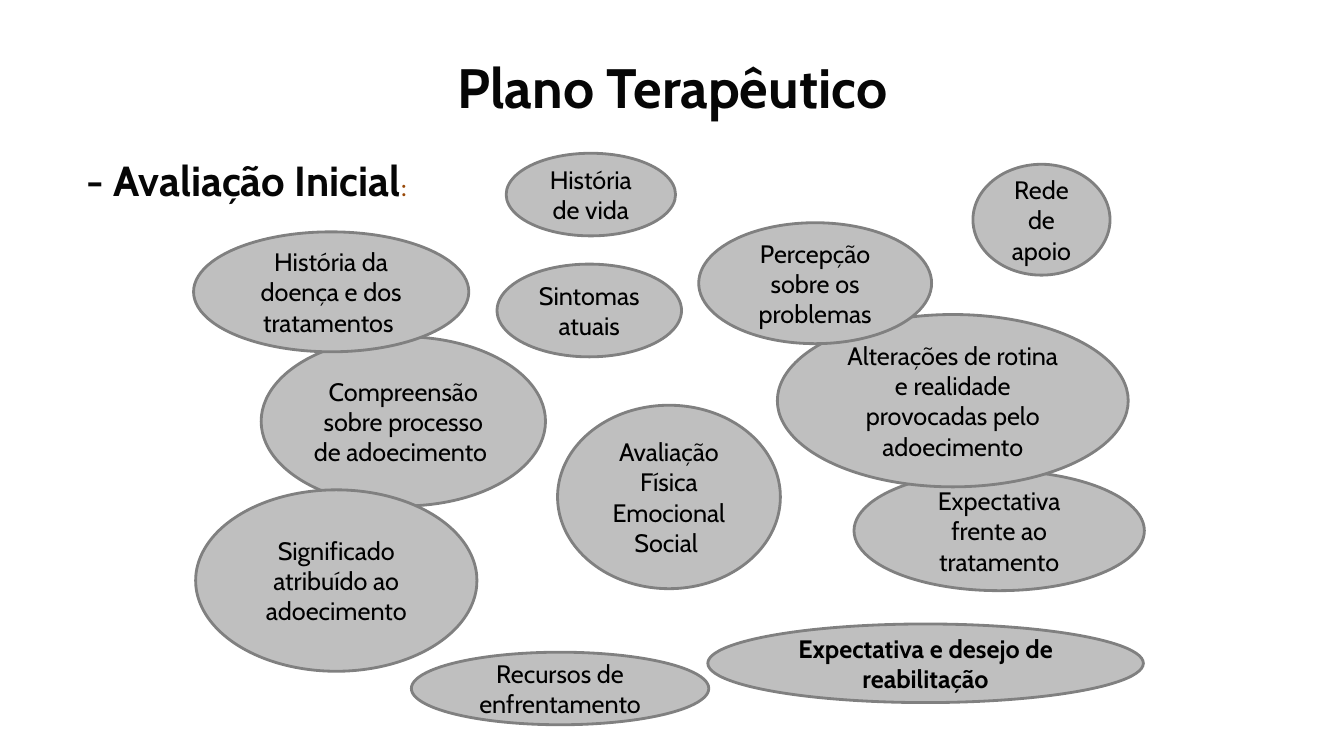
from pptx import Presentation
from pptx.dml.color import RGBColor
from pptx.enum.shapes import MSO_SHAPE
from pptx.enum.text import MSO_ANCHOR, PP_ALIGN
from pptx.util import Emu, Pt

EMU_PER_PX = 9144
TITLE_ONLY = 5
ELLIPSE = MSO_SHAPE.OVAL
MIDDLE, TOP = MSO_ANCHOR.MIDDLE, MSO_ANCHOR.TOP
CENTER, JUSTIFY = PP_ALIGN.CENTER, PP_ALIGN.JUSTIFY

COLORS = {
    "heading": "060606",
    "text": "000000",
    "colon": "984807",
    "bubble": "BFBFBF",
    "outline": "808080",
}

# left, top, width, height, topic; from back to front
TOPICS = [
    (502, 152, 168, 82, "História de vida"),
    (259, 334, 282, 168, "Compreensão sobre processo de adoecimento "),
    (194, 486, 279, 180, "Significado atribuído ao adoecimento"),
    (847, 467, 288, 119, "Expectativa frente ao tratamento"),
    (702, 619, 432, 78, "Expectativa e desejo de reabilitação"),
    (408, 647, 295, 72, "Recursos de enfrentamento"),
    (965, 163, 136, 110, "Rede de apoio"),
    (771, 312, 348, 171, "Alterações de rotina e realidade provocadas pelo adoecimento"),
    (493, 262, 183, 92, "Sintomas atuais"),
    (693, 221, 231, 120, "Percepção sobre os problemas"),
    (192, 230, 273, 119, "História da doença e dos tratamentos "),
    (553, 402, 221, 182, "Avaliação\nFísica\nEmocional\nSocial "),
]
HIGHLIGHTED = "Expectativa e desejo de reabilitação"


def px(length):
    return Emu(length * EMU_PER_PX)


def color(name):
    return RGBColor.from_string(COLORS[name])


def add_run(paragraph, text, *, size=18, font="Cabin", ink="text", bold=False):
    run = paragraph.add_run()
    run.text = text
    run.font.size = Pt(size)
    run.font.name = font
    run.font.bold = bold
    run.font.color.rgb = color(ink)


class TherapySlide:
    """Holds the slide and draws its kinds of element in one style."""

    def __init__(self, presentation):
        self.slide = presentation.slides.add_slide(presentation.slide_layouts[TITLE_ONLY])

    def set_text(self, frame, lines, *, anchor=MIDDLE, align=CENTER, **run_format):
        """Fill a text frame with one paragraph per line; return the last one."""
        frame.word_wrap = True
        frame.vertical_anchor = anchor
        for index, line in enumerate(lines.split("\n")):
            paragraph = frame.add_paragraph() if index else frame.paragraphs[0]
            paragraph.alignment = align
            add_run(paragraph, line, **run_format)
        return paragraph

    def title(self, left, top, width, height, text):
        heading = self.slide.shapes.title
        heading.left, heading.top = px(left), px(top)
        heading.width, heading.height = px(width), px(height)
        self.set_text(heading.text_frame, text, size=39.6, ink="heading", bold=True)

    def subtitle(self, left, top, width, height, text):
        box = self.slide.shapes.add_textbox(px(left), px(top), px(width), px(height))
        frame = box.text_frame
        frame.margin_left = frame.margin_right = px(7)
        frame.margin_top = frame.margin_bottom = px(4)
        paragraph = self.set_text(frame, text, anchor=TOP, align=JUSTIFY,
                                  size=30, ink="heading", bold=True)
        paragraph.space_before = paragraph.space_after = Pt(6)
        add_run(paragraph, ":", font="Calibri", ink="colon")

    def bubble(self, left, top, width, height, topic):
        bubble = self.slide.shapes.add_shape(ELLIPSE, px(left), px(top), px(width), px(height))
        bubble.shadow.inherit = False
        bubble.fill.solid()
        bubble.fill.fore_color.rgb = color("bubble")
        bubble.line.color.rgb = color("outline")
        bubble.line.width = Pt(2)
        self.set_text(bubble.text_frame, topic, bold=topic == HIGHLIGHTED)


def main():
    presentation = Presentation()
    presentation.slide_width, presentation.slide_height = px(1333), px(750)
    plan = TherapySlide(presentation)
    plan.title(167, 36, 1000, 100, "Plano Terapêutico")
    plan.subtitle(79, 149, 787, 311, "- Avaliação Inicial")
    for topic in TOPICS:
        plan.bubble(*topic)
    presentation.save("out.pptx")


if __name__ == "__main__":
    main()
